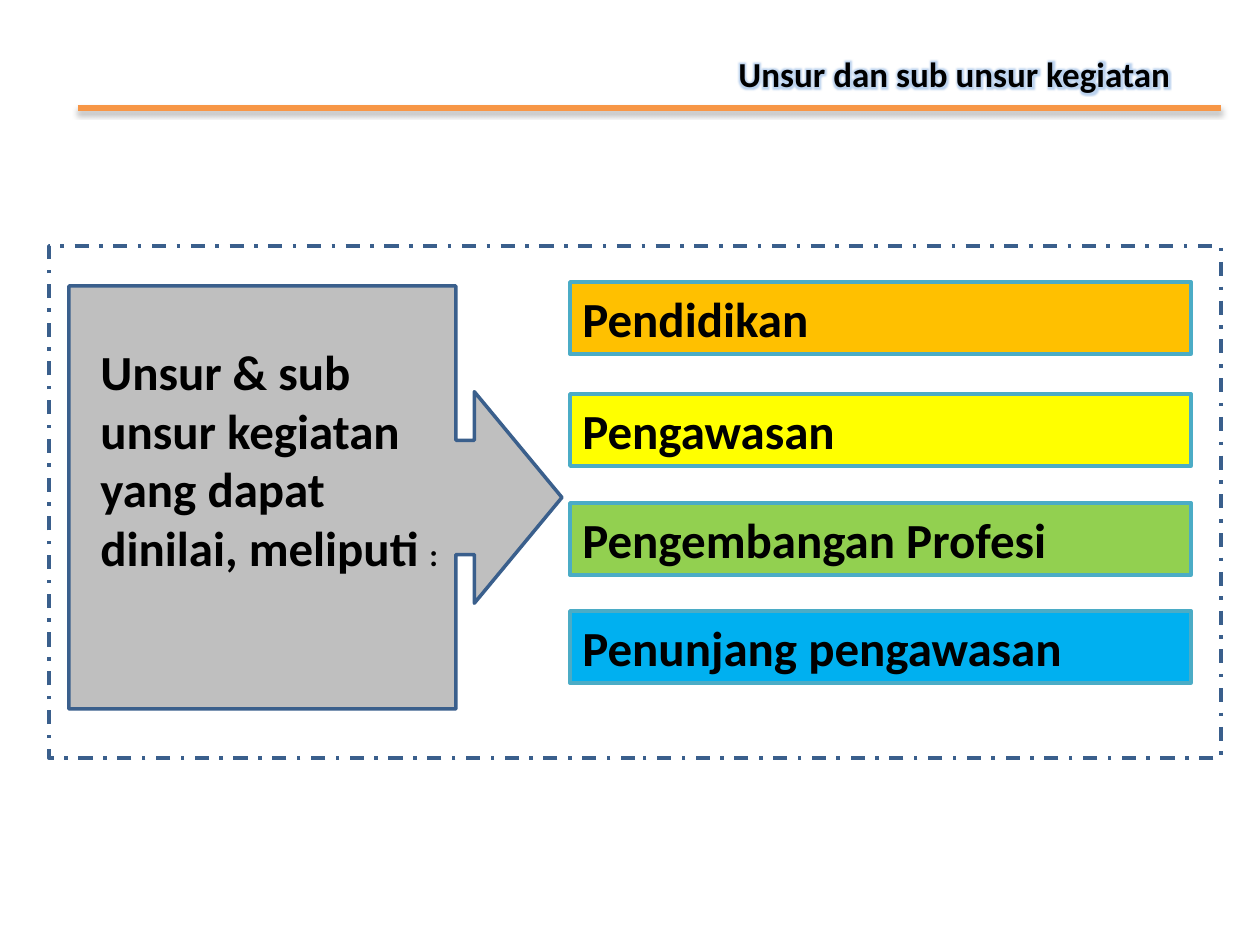
"""Builds the slide on elements and sub-elements of activity."""
from lxml.etree import SubElement
from pptx import Presentation
from pptx.dml.color import RGBColor
from pptx.enum.dml import MSO_LINE
from pptx.enum.shapes import MSO_CONNECTOR, MSO_SHAPE
from pptx.enum.text import MSO_ANCHOR, PP_ALIGN
from pptx.oxml import parse_xml
from pptx.oxml.ns import nsdecls, qn
from pptx.util import Inches, Pt

BLACK = RGBColor(0, 0, 0)
ORANGE = RGBColor(0xF7, 0x96, 0x46)
AMBER = RGBColor(0xFF, 0xC0, 0x00)
YELLOW = RGBColor(0xFF, 0xFF, 0x00)
GREEN = RGBColor(0x92, 0xD0, 0x50)
BLUE = RGBColor(0x00, 0xB0, 0xF0)
TEAL = RGBColor(0x4B, 0xAC, 0xC6)
NAVY = RGBColor(0x3A, 0x5F, 0x8C)
GREY = RGBColor(0xBF, 0xBF, 0xBF)
GLOW = RGBColor(0x8E, 0xB4, 0xE3)

TITLE = "Unsur dan sub unsur kegiatan"
INTRO = "Unsur & sub unsur kegiatan yang dapat dinilai, meliputi "
ELEMENTS = [
    ("Pendidikan", 282, AMBER),
    ("Pengawasan", 394, YELLOW),
    ("Pengembangan Profesi", 503, GREEN),
    ("Penunjang pengawasan", 611, BLUE),
]
CALLOUT_ADJ = (0.27, 0.25, 0.207, 0.785)


def px(*values):
    return [round(v * Inches(1) / 126) for v in values]


def set_font(font, size):
    font.name, font.size, font.bold = "Calibri", Pt(size), True
    font.color.rgb = BLACK


def add_box(slide, kind, box, fill, line):
    sp = slide.shapes.add_shape(kind, *px(*box))
    sp.shadow.inherit = False
    if fill is None:
        sp.fill.background()
    else:
        sp.fill.solid()
        sp.fill.fore_color.rgb = fill
    sp.line.color.rgb = line
    sp.line.width = Pt(2)
    return sp


def add_rule(slide):
    rule = slide.shapes.add_connector(MSO_CONNECTOR.STRAIGHT, *px(78, 108, 1221, 108))
    rule.line.color.rgb = ORANGE
    rule.line.width = Pt(3)
    effects = SubElement(rule._element.spPr, qn("a:effectLst"))
    effects.append(parse_xml(
        f'<a:outerShdw {nsdecls("a")} blurRad="{Pt(3.1)}" dist="{Pt(1.8)}" dir="5400000" '
        f'rotWithShape="0"><a:srgbClr val="{BLACK}"><a:alpha val="35000"/></a:srgbClr></a:outerShdw>'))


def add_title(slide):
    sp = slide.shapes.title
    sp.left, sp.top, sp.width, sp.height = px(295, 0, 888, 147)
    tf = sp.text_frame
    tf.vertical_anchor = MSO_ANCHOR.MIDDLE
    p = tf.paragraphs[0]
    p.alignment = PP_ALIGN.RIGHT
    r = p.add_run()
    r.text = TITLE
    set_font(r.font, 20)
    r.font._element.find(qn("a:solidFill")).addnext(parse_xml(
        f'<a:effectLst {nsdecls("a")}><a:glow rad="{Pt(4)}"><a:srgbClr val="{GLOW}">'
        '<a:alpha val="60000"/></a:srgbClr></a:glow></a:effectLst>'))


def add_elements(slide):
    for label, top, fill in ELEMENTS:
        sp = add_box(slide, MSO_SHAPE.RECTANGLE, (570, top, 621, 72), fill, TEAL)
        tf = sp.text_frame
        tf.vertical_anchor = MSO_ANCHOR.TOP
        p = tf.paragraphs[0]
        p.text = label
        p.alignment = PP_ALIGN.LEFT
        set_font(p.font, 28)


def add_intro(slide):
    callout = add_box(slide, MSO_SHAPE.RIGHT_ARROW_CALLOUT, (69, 286, 493, 423), GREY, NAVY)
    for i, value in enumerate(CALLOUT_ADJ):
        callout.adjustments[i] = value
    tf = slide.shapes.add_textbox(*px(88, 335, 363, 310)).text_frame
    tf.word_wrap = True
    p = tf.paragraphs[0]
    for text, size in ((INTRO, 28), (":", 18)):
        r = p.add_run()
        r.text = text
        set_font(r.font, size)


def main():
    prs = Presentation()
    prs.slide_width, prs.slide_height = px(1260, 945)
    slide = prs.slides.add_slide(prs.slide_layouts[5])
    add_rule(slide)
    add_title(slide)
    add_elements(slide)
    add_intro(slide)
    frame = add_box(slide, MSO_SHAPE.RECTANGLE, (49, 246, 1172, 512), None, NAVY)
    frame.line.dash_style = MSO_LINE.DASH_DOT
    prs.save("out.pptx")


if __name__ == "__main__":
    main()
